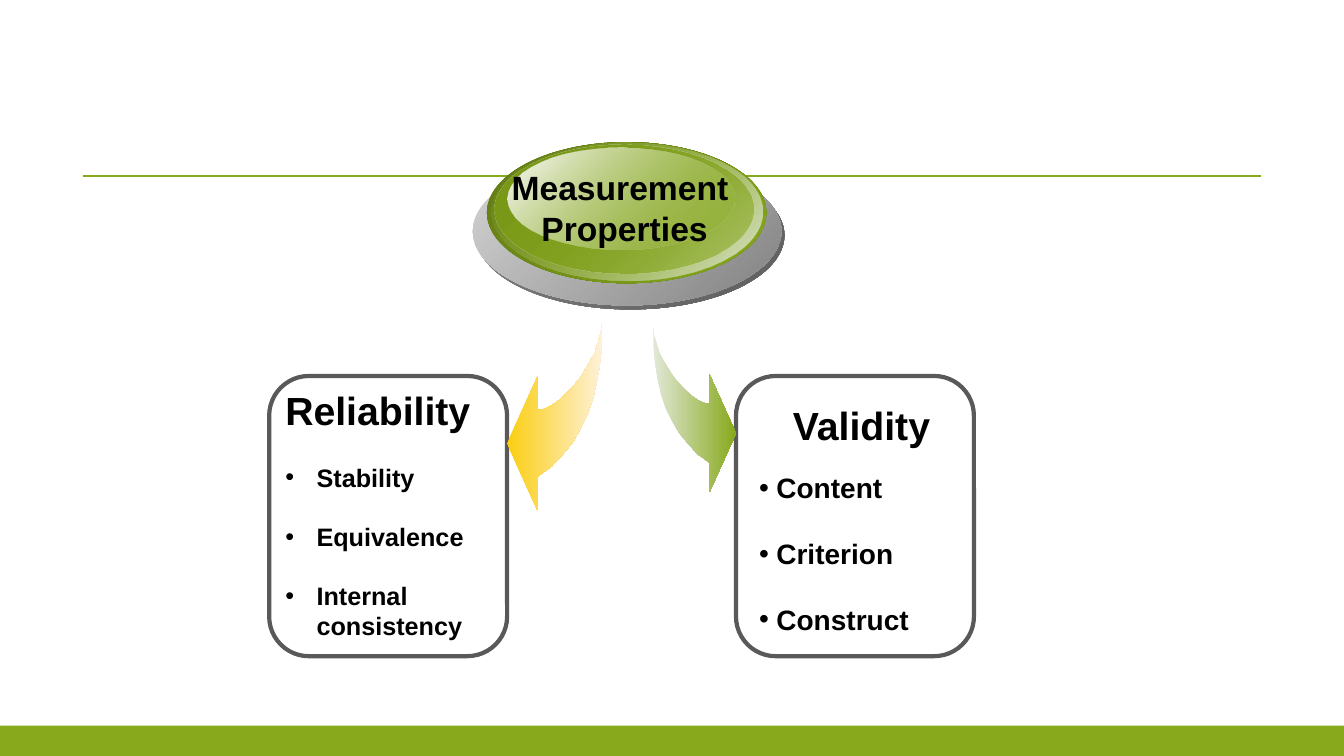
from lxml import etree
from pptx import Presentation
from pptx.dml.color import RGBColor
from pptx.enum.shapes import MSO_CONNECTOR as CONN, MSO_SHAPE as SHAPE
from pptx.enum.text import MSO_ANCHOR as ANCHOR, MSO_AUTO_SIZE as AUTO, PP_ALIGN as ALIGN
from pptx.oxml.ns import qn
from pptx.util import Inches, Pt

GREEN = RGBColor(0x87, 0xA9, 0x1B)
GREEN_MID = RGBColor(0x7A, 0x99, 0x18)
GREEN_DARK = RGBColor(0x61, 0x79, 0x13)
GREEN_PALE = RGBColor(0xDF, 0xE6, 0xD4)
GREEN_MIST = RGBColor(0xE2, 0xE8, 0xD8)
YELLOW = RGBColor(0xFB, 0xCE, 0x11)
CREAM = RGBColor(0xFE, 0xF1, 0xD8)
SILVER = RGBColor(0xD4, 0xD4, 0xD4)
GRAY = RGBColor(0x82, 0x82, 0x82)
GRAY_DARK = RGBColor(0x5F, 0x5F, 0x5F)
FRAME_GRAY = RGBColor(0x59, 0x59, 0x59)
BLACK = RGBColor(0, 0, 0)
WHITE = RGBColor(0xFF, 0xFF, 0xFF)

# Button ellipses, back to front: box, then (colour, opacity %) at each end
BUTTON = [
    ((4.72, 1.60, 3.06, 1.47), (GRAY, 100), (GRAY_DARK, 100)),
    ((4.69, 1.56, 3.06, 1.47), (SILVER, 100), (GRAY, 100)),
    ((4.83, 1.41, 2.77, 1.40), (GREEN_DARK, 100), (GREEN, 100)),
    ((4.87, 1.41, 2.69, 1.37), (GREEN, 0), (GREEN_PALE, 100)),
    ((4.90, 1.43, 2.57, 1.28), (GREEN_MID, 100), (GREEN, 48)),
    ((5.03, 1.46, 2.26, 1.02), (WHITE, 100), (GREEN, 38)),
]

# Left-pointing curved arrow on a 94 x 186 grid
ARROW_GRID = (94, 186)
ARROW = [(94, 0), (94, 21), (92, 40), (89, 58), (85, 75), (80, 90), (73, 104),
         (65, 118), (55, 130), (44, 142), (30, 152), (30, 185), (0, 119),
         (30, 53), (30, 86), (36, 85), (43, 82), (49, 78), (56, 72), (63, 65),
         (70, 57), (76, 48), (82, 38), (87, 29), (90, 19), (93, 9)]


def inches(values):
    return [Inches(v) for v in values]


def place(shape, box):
    for name, value in zip(("left", "top", "width", "height"), inches(box)):
        setattr(shape, name, value)


def add_plain(s, kind, box, fill=None):
    sp = s.shapes.add_shape(kind, *inches(box))
    sp.shadow.inherit = False
    sp.line.fill.background()
    if fill is None:
        sp.fill.background()
    else:
        sp.fill.solid()
        sp.fill.fore_color.rgb = fill
    return sp


def set_gradient(sp, start, end, angle):
    sp.fill.gradient()
    sp.fill.gradient_angle = angle
    nodes = sp.element.spPr.iter(qn("a:gs"))
    for stop, node, (color, opacity) in zip(sp.fill.gradient_stops, nodes, (start, end)):
        stop.color.rgb = color
        if opacity < 100:
            etree.SubElement(node[0], qn("a:alpha"), val=str(opacity * 1000))


def add_rule(s, x1, x2, y):
    line = s.shapes.add_connector(CONN.STRAIGHT, *inches((x1, y, x2, y)))
    line.line.color.rgb = GREEN
    line.line.width = Pt(1.5)
    etree.SubElement(line.element.spPr, qn("a:effectLst"))


def add_frame(s, left):
    frame = add_plain(s, SHAPE.ROUNDED_RECTANGLE, (left, 3.73, 2.36, 2.78))
    frame.line.color.rgb = FRAME_GRAY
    frame.line.width = Pt(3)


def add_arrow(s, box, start, end, flip=False):
    left, top, width, height = box
    columns, rows = ARROW_GRID
    points = [(Inches(left + width * ((columns - x) if flip else x) / columns),
               Inches(top + height * y / rows)) for x, y in ARROW]
    builder = s.shapes.build_freeform(*points[0])
    builder.add_line_segments(points[1:], close=True)
    sp = builder.convert_to_shape()
    sp.shadow.inherit = False
    sp.line.fill.background()
    set_gradient(sp, (start, 100), (end, 100), 0)


def prepare_text(sp, box, wrap):
    place(sp, box)
    tf = sp.text_frame
    settings = {"word_wrap": wrap, "auto_size": AUTO.NONE, "vertical_anchor": ANCHOR.TOP}
    for name, value in settings.items():
        setattr(tf, name, value)
    return tf


def write_line(tf, text, size, align=ALIGN.LEFT, before=0, indent=0):
    p = tf.paragraphs[0] if not tf.text else tf.add_paragraph()
    for name, value in {"alignment": align, "space_before": Pt(before), "line_spacing": 1.0}.items():
        setattr(p, name, value)
    r = p.add_run()
    r.text = text
    for name, value in {"size": Pt(size), "name": "Arial", "bold": True}.items():
        setattr(r.font, name, value)
    r.font.color.rgb = BLACK
    # Bullet and hanging indent
    props = p._p.get_or_add_pPr()
    props.set("marL", str(Inches(indent)))
    props.set("indent", str(-Inches(indent)))
    if indent:
        etree.SubElement(props, qn("a:buFont"), typeface="Arial")
        etree.SubElement(props, qn("a:buChar"), char="•")
    else:
        etree.SubElement(props, qn("a:buNone"))


def fill_list(sp, box, heading, align, items, size, gaps, indent):
    tf = prepare_text(sp, box, True)
    write_line(tf, heading, 28, align)
    for item, gap in zip(items, gaps):
        write_line(tf, item, size, before=gap, indent=indent)


def main():
    prs = Presentation()
    prs.slide_width, prs.slide_height = inches((13.33, 7.5))
    s = prs.slides.add_slide(prs.slide_layouts.get_by_name("Two Content"))
    title, reliability, validity = s.placeholders

    # Footer band and title rule
    add_plain(s, SHAPE.RECTANGLE, (0, 7.2, 13.33, 0.3), GREEN)
    add_rule(s, 0.82, 12.51, 1.75)

    # Framed lists
    for left in (2.67, 7.3):
        add_frame(s, left)
    fill_list(reliability, (2.73, 3.78, 2.1, 2.93), "Reliability", ALIGN.LEFT,
              ["Stability", "Equivalence", "Internal consistency"],
              18, (20.7, 20.7, 20.7), 0.31)
    fill_list(validity, (7.43, 3.93, 2.23, 2.49), "Validity", ALIGN.CENTER,
              ["Content", "Criterion", "Construct"], 20, (16.1, 23, 23), 0.17)

    # Arrows from the button to the lists
    add_arrow(s, (5.03, 3.21, 0.94, 1.86), YELLOW, CREAM)
    add_arrow(s, (6.48, 3.25, 0.82, 1.64), GREEN_MIST, GREEN, flip=True)

    # Glossy button with the title in front
    for box, start, end in BUTTON:
        set_gradient(add_plain(s, SHAPE.OVAL, box), start, end, 315)
    tf = prepare_text(title, (4.96, 1.61, 2.47, 0.91), False)
    for text in ("Measurement ", "Properties"):
        write_line(tf, text, 24, ALIGN.CENTER)
    title.element.getparent().append(title.element)

    prs.save("out.pptx")


if __name__ == "__main__":
    main()
